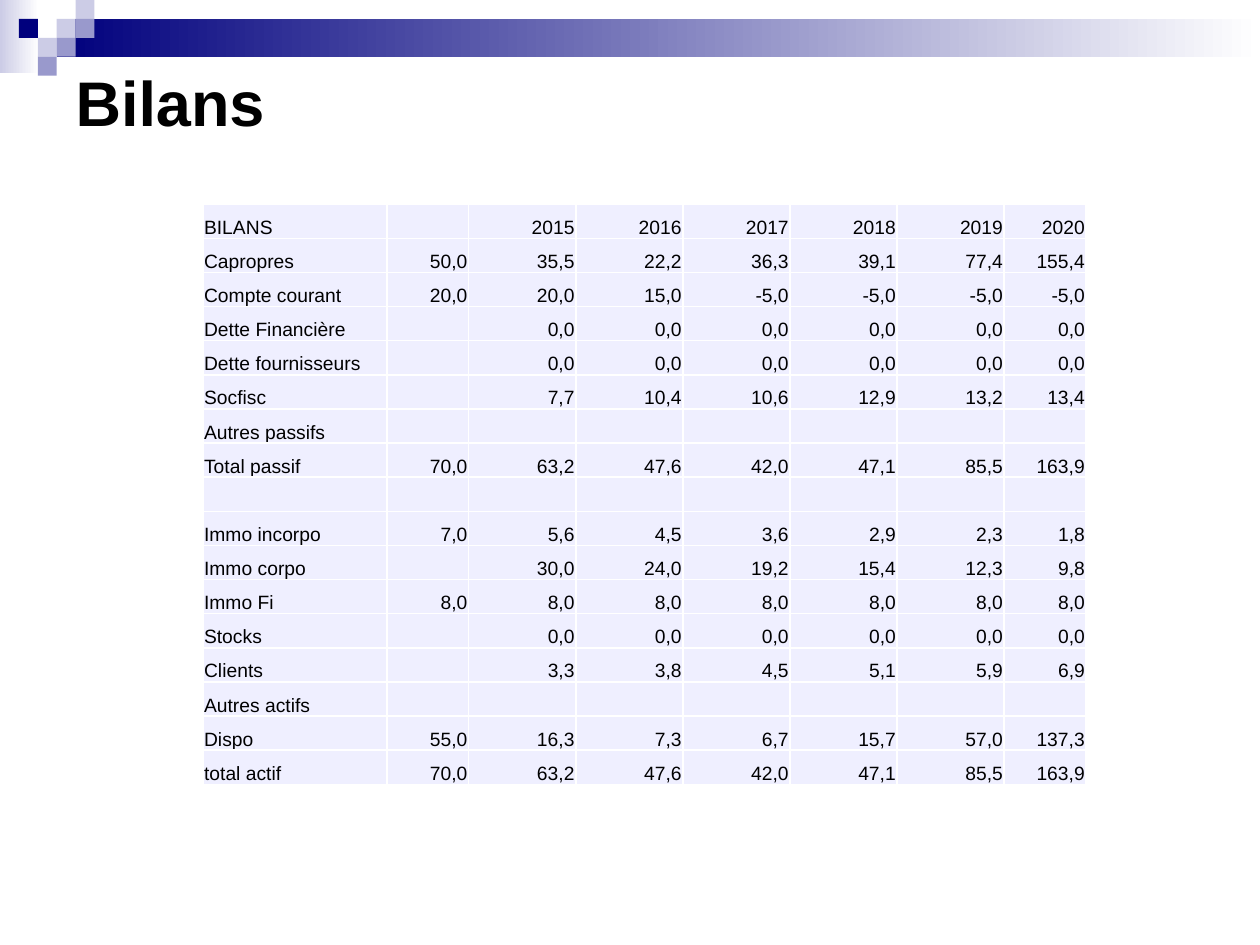
from dataclasses import dataclass

from lxml.etree import SubElement
from pptx import Presentation
from pptx.dml.color import RGBColor as Color
from pptx.enum.shapes import MSO_SHAPE as Shape
from pptx.enum.text import MSO_ANCHOR as Anchor
from pptx.enum.text import MSO_AUTO_SIZE as AutoSize
from pptx.enum.text import PP_ALIGN as Align
from pptx.oxml.ns import qn
from pptx.util import Inches, Pt


@dataclass(frozen=True)
class Theme:
    font: str = "Arial"
    text: str = "000000"
    white: str = "FFFFFF"
    navy: str = "00007D"
    mid: str = "9999CC"
    pale: str = "CCCCE6"
    cell: str = "EFEFFF"
    title_size: int = 36
    table_size: int = 11
    border: int = 1


THEME = Theme()

SQUARE = 0.15
SQUARES = [
    (3, 1, THEME.pale), (4, 0, THEME.pale), (4, 1, THEME.mid), (2, 2, THEME.pale),
    (1, 1, THEME.navy), (3, 2, THEME.mid), (2, 3, THEME.mid),
]

COLUMNS = [1.46, 0.65] + [0.85] * 5 + [0.65]
BALANCE = """\
BILANS||2015|2016|2017|2018|2019|2020
Capropres|50,0|35,5|22,2|36,3|39,1|77,4|155,4
Compte courant|20,0|20,0|15,0|-5,0|-5,0|-5,0|-5,0
Dette Financière||0,0|0,0|0,0|0,0|0,0|0,0
Dette fournisseurs||0,0|0,0|0,0|0,0|0,0|0,0
Socfisc||7,7|10,4|10,6|12,9|13,2|13,4
Autres passifs|||||||
Total passif|70,0|63,2|47,6|42,0|47,1|85,5|163,9
|||||||
Immo incorpo|7,0|5,6|4,5|3,6|2,9|2,3|1,8
Immo corpo||30,0|24,0|19,2|15,4|12,3|9,8
Immo Fi|8,0|8,0|8,0|8,0|8,0|8,0|8,0
Stocks||0,0|0,0|0,0|0,0|0,0|0,0
Clients||3,3|3,8|4,5|5,1|5,9|6,9
Autres actifs|||||||
Dispo|55,0|16,3|7,3|6,7|15,7|57,0|137,3
total actif|70,0|63,2|47,6|42,0|47,1|85,5|163,9"""


def add_span(para, text, size, bold=False):
    span = para.add_run()
    span.text = text
    span.font.name = THEME.font
    span.font.size = Pt(size)
    span.font.bold = bold
    span.font.color.rgb = Color.from_string(THEME.text)


def add_block(page, box, *colors):
    block = page.shapes.add_shape(Shape.RECTANGLE, *map(Inches, box))
    block.shadow.inherit = False
    block.line.fill.background()
    if len(colors) == 1:
        block.fill.solid()
        block.fill.fore_color.rgb = Color.from_string(colors[0])
        return
    block.fill.gradient()
    block.fill.gradient_angle = 0
    for stop, color in zip(block.fill.gradient_stops, colors):
        stop.color.rgb = Color.from_string(color)


def add_banner(page, box):
    left, top, width, height = box
    add_block(page, (left, top, 0.31, height), THEME.pale, THEME.white)
    bar_left = 3 * SQUARE
    add_block(page, (left + bar_left, top + SQUARE, width - bar_left, 2 * SQUARE),
              THEME.navy, THEME.white)
    for column, row, color in SQUARES:
        add_block(page, (left + column * SQUARE, top + row * SQUARE, SQUARE, SQUARE), color)


def add_title(page, box, text):
    title = page.shapes.title
    title.left, title.top, title.width, title.height = map(Inches, box)
    frame = title.text_frame
    frame.auto_size = AutoSize.NONE
    frame.vertical_anchor = Anchor.MIDDLE
    para = frame.paragraphs[0]
    para.alignment = Align.LEFT
    add_span(para, text, THEME.title_size, bold=True)


def set_borders(cell):
    properties = cell._tc.get_or_add_tcPr()
    for side in ("a:lnL", "a:lnR", "a:lnT", "a:lnB"):
        line = SubElement(properties, qn(side), w=str(Pt(THEME.border)))
        fill = SubElement(line, qn("a:solidFill"))
        SubElement(fill, qn("a:srgbClr"), val=THEME.white)


def fill_cell(cell, text, align):
    set_borders(cell)
    cell.fill.solid()
    cell.fill.fore_color.rgb = Color.from_string(THEME.cell)
    cell.vertical_anchor = Anchor.BOTTOM
    cell.margin_left = cell.margin_right = cell.margin_top = Inches(0.01)
    cell.margin_bottom = 0
    para = cell.text_frame.paragraphs[0]
    para.alignment = align
    if text:
        add_span(para, text, THEME.table_size)
    else:
        SubElement(para._p, qn("a:endParaRPr"), sz=str(THEME.table_size * 100))


def add_balance(page, box):
    rows = [line.split("|") for line in BALANCE.splitlines()]
    table = page.shapes.add_table(len(rows), len(COLUMNS), *map(Inches, box)).table
    table.first_row = table.horz_banding = False
    for column, width in zip(table.columns, COLUMNS):
        column.width = Inches(width)
    for row, values in zip(table.rows, rows):
        row.height = Inches(box[3] / len(rows))
        for index, (cell, text) in enumerate(zip(row.cells, values)):
            fill_cell(cell, text, Align.RIGHT if index else Align.LEFT)


def main():
    deck = Presentation()
    deck.slide_width, deck.slide_height = Inches(10), Inches(7.5)
    page = deck.slides.add_slide(deck.slide_layouts[5])
    add_banner(page, (0, 0, 10, 0.58))
    add_title(page, (0.5, 0.05, 9, 1.5), "Bilans")
    add_balance(page, (1.61, 1.62, sum(COLUMNS), 4.61))
    deck.save("out.pptx")


if __name__ == "__main__":
    main()
